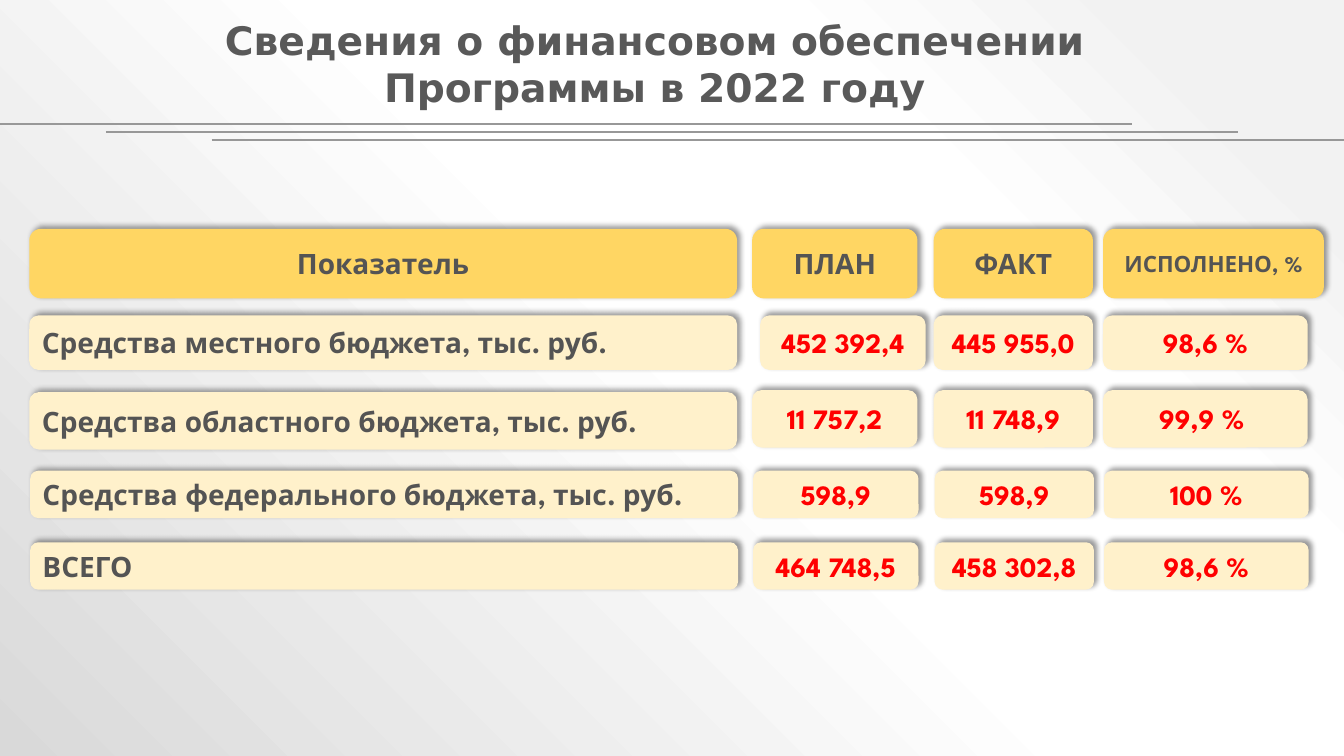
import pptx
import pptx.dml.color
import pptx.enum.shapes
import pptx.enum.text
import pptx.oxml
import pptx.oxml.ns
import pptx.util
import lxml.etree

Inches = pptx.util.Inches
ALIGN = pptx.enum.text.PP_ALIGN
COLORS = {
    "title": "595959", "rule": "989898", "header": "FFD663", "cell": "FFF1CB",
    "label": "545454", "value": "FF0000", "shadow": "000000",
}
BACKGROUND_STOPS = [(10, "F2F2F2"), (28, "FFFFFF"), (48, "FFFFFF"), (100, "D9D9D9")]
TITLE_FONT = "DejaVu Sans"
TABLE_FONT = "League Spartan"

COLUMNS = [(0.29, 7.02), (7.46, 1.64), (9.26, 1.58), (10.94, 2.03)]  # left, width
HEADER_ROW = (2.27, 0.69)  # top, height
LAST_HEADER_WIDTH = 2.19
HEADERS = [("Показатель", 20), ("ПЛАН", 20), ("ФАКТ", 20), ("ИСПОЛНЕНО, %", 16)]
# top, height, shift to the right, texts
ROWS = [
    (3.13, 0.54, 0, ["Средства местного бюджета, тыс. руб.", "452 392,4", "445 955,0", "98,6 %"]),
    (3.87, 0.57, 0, ["Средства областного бюджета, тыс. руб.", "11 757,2", "11 748,9", "99,9 % "]),
    (4.67, 0.47, 0.01, ["Средства федерального бюджета, тыс. руб.", "598,9", "598,9", "100 %"]),
    (5.38, 0.47, 0.01, ["ВСЕГО", "464 748,5", "458 302,8", "98,6 %"]),
]
NUDGES = {(0, 1): (0.08, 0), (1, 0): (0, 0.02)}  # (row, column): (right, down)


def rgb(name):
    return pptx.dml.color.RGBColor.from_string(COLORS[name])


def set_background(slide):
    """Radial gradient that spreads from the top right corner."""
    slide.background.fill.gradient()
    gradient = slide.background._cSld.find(".//" + pptx.oxml.ns.qn("a:gradFill"))
    stops = "".join(
        f'<a:gs pos="{position * 1000}"><a:srgbClr val="{color}"/></a:gs>'
        for position, color in BACKGROUND_STOPS
    )
    gradient.getparent().replace(gradient, pptx.oxml.parse_xml(
        f'<a:gradFill {pptx.oxml.ns.nsdecls("a")} rotWithShape="1"><a:gsLst>{stops}</a:gsLst>'
        '<a:path path="circle"><a:fillToRect l="100000" b="100000"/></a:path></a:gradFill>'
    ))


def format_text(text_frame, alignment, font_name, size, color):
    text_frame.word_wrap = True
    text_frame.vertical_anchor = pptx.enum.text.MSO_ANCHOR.MIDDLE
    for paragraph in text_frame.paragraphs:
        paragraph.alignment = alignment
        for run in paragraph.runs:
            run.font.name = font_name
            run.font.size = pptx.util.Pt(size)
            run.font.bold = True
            run.font.color.rgb = rgb(color)


def add_title(slide):
    title = slide.shapes.title
    title.left, title.top = Inches(-0.21), Inches(0.29)
    title.width, title.height = Inches(13.54), Inches(0.68)
    title.text_frame.text = "Сведения о финансовом обеспечении \nПрограммы в 2022 году "
    title.text_frame.auto_size = pptx.enum.text.MSO_AUTO_SIZE.NONE
    format_text(title.text_frame, ALIGN.CENTER, TITLE_FONT, 28, "title")


def add_rules(slide):
    """Three lines under the title, each stepped right and down."""
    for step in range(3):
        left, top = 1.05 * step, 1.23 + 0.08 * step
        rule = slide.shapes.add_connector(
            pptx.enum.shapes.MSO_CONNECTOR.STRAIGHT,
            Inches(left), Inches(top), Inches(left + 11.23), Inches(top),
        )
        rule.line.color.rgb = rgb("rule")
        rule.line.width = pptx.util.Pt(2)
        lxml.etree.SubElement(rule._element.spPr, pptx.oxml.ns.qn("a:effectLst"))


def add_shadow(shape):
    shape.shadow.inherit = False
    effects = shape._element.spPr.find(pptx.oxml.ns.qn("a:effectLst"))
    effects.append(pptx.oxml.parse_xml(
        f'<a:outerShdw {pptx.oxml.ns.nsdecls("a")} blurRad="{pptx.util.Pt(4)}" '
        f'dist="{pptx.util.Pt(3)}" dir="{315 * 60000}" algn="bl" rotWithShape="0">'
        f'<a:srgbClr val="{COLORS["shadow"]}"><a:alpha val="40000"/></a:srgbClr></a:outerShdw>'
    ))


def add_card(slide, box, text, fill, color, size=20, alignment=ALIGN.CENTER):
    card = slide.shapes.add_shape(
        pptx.enum.shapes.MSO_SHAPE.ROUNDED_RECTANGLE, *(Inches(length) for length in box)
    )
    card.fill.solid()
    card.fill.fore_color.rgb = rgb(fill)
    card.line.fill.background()
    add_shadow(card)
    card.text_frame.text = text
    format_text(card.text_frame, alignment, TABLE_FONT, size, color)


def add_header(slide):
    top, height = HEADER_ROW
    for (left, width), (text, size) in zip(COLUMNS, HEADERS):
        if (left, width) == COLUMNS[-1]:
            width = LAST_HEADER_WIDTH
        add_card(slide, (left, top, width, height), text, "header", "label", size)


def add_rows(slide):
    for row, (top, height, shift, texts) in enumerate(ROWS):
        for column, ((left, width), text) in enumerate(zip(COLUMNS, texts)):
            right, down = NUDGES.get((row, column), (0, 0))
            box = (left + shift + right, top + down, width, height)
            if column == 0:
                add_card(slide, box, text, "cell", "label", alignment=ALIGN.LEFT)
            else:
                add_card(slide, box, text, "cell", "value")


def main():
    presentation = pptx.Presentation()
    presentation.slide_width, presentation.slide_height = Inches(13.33), Inches(7.5)
    slide = presentation.slides.add_slide(presentation.slide_layouts.get_by_name("Title Only"))
    set_background(slide)
    add_rules(slide)
    add_title(slide)
    add_header(slide)
    add_rows(slide)
    presentation.save("out.pptx")


if __name__ == "__main__":
    main()
